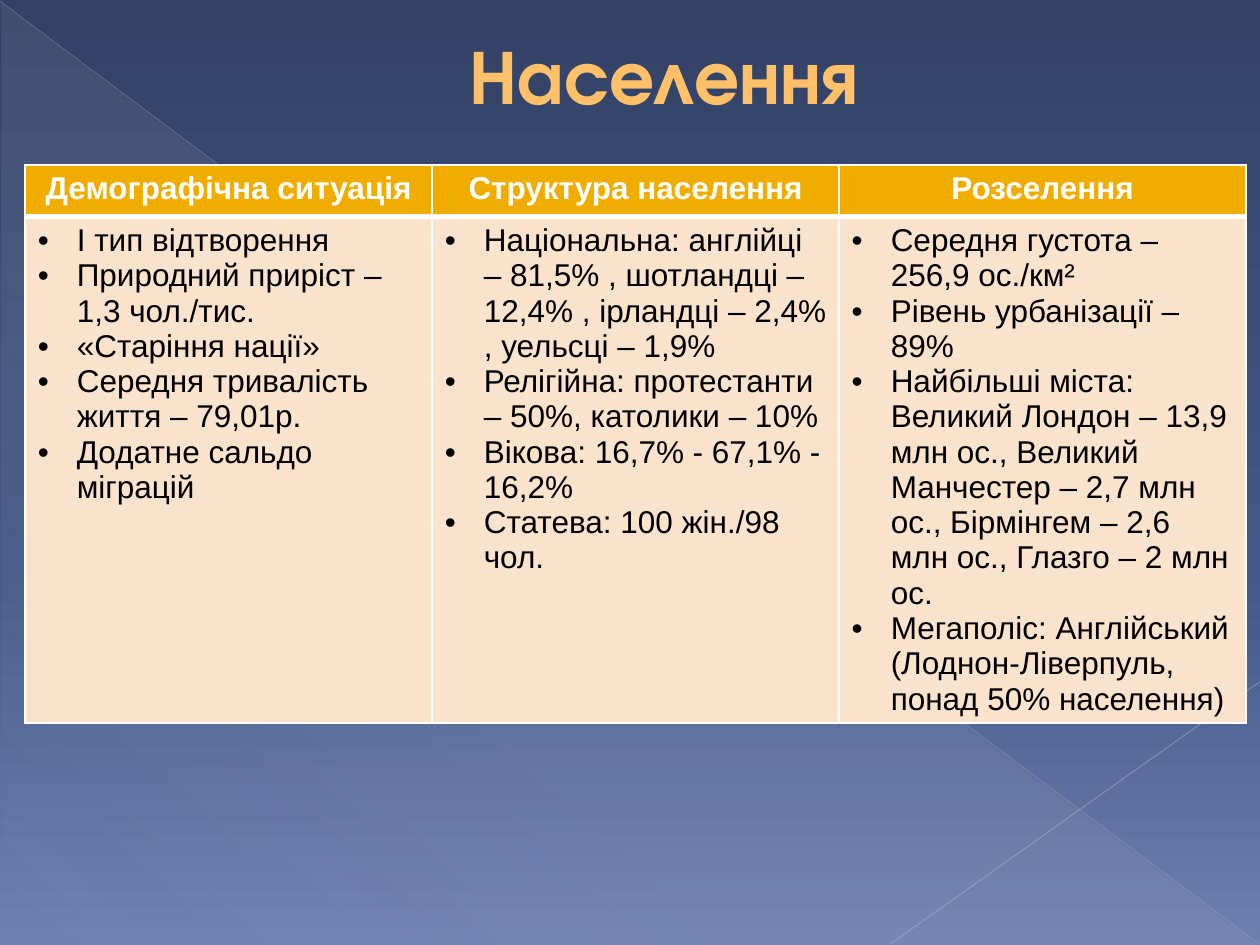
"""Builds the population slide on a grid of 100 columns by 75 rows."""
from typing import NamedTuple

from lxml.etree import SubElement as Sub
from pptx import Presentation as Deck
from pptx.dml.color import RGBColor as Color
from pptx.enum.shapes import MSO_CONNECTOR as Conn, MSO_SHAPE as Shape
from pptx.enum.text import MSO_ANCHOR as Anchor, MSO_AUTO_SIZE as Auto, PP_ALIGN as Align
from pptx.oxml.ns import qn
from pptx.util import Inches, Pt

COLS, ROWS = 100, 75
CELL = Inches(0.1)
WHITE = "FFFFFF"
HEAD = dict(name="Arial", size=Pt(18), bold=True)
BODY = dict(HEAD, bold=False)
TITLE = dict(name="TeX Gyre Adventor", size=Pt(44), bold=True)


class Stop(NamedTuple):
    """A gradient stop in percent."""
    pos: int
    tint: str
    alpha: int = 100


class Ray(NamedTuple):
    """A thin translucent line in grid units."""
    ends: tuple
    tint: str
    width: float
    alpha: int


class Topic(NamedTuple):
    """A table column with its heading and points."""
    head: str
    items: tuple


SKY = (Stop(0, "334265"), Stop(60, "445887"), Stop(100, "6C7FB1"))
HAZE = (Stop(0, "D4D4D6", 10), Stop(70, "D4D4D6", 8), Stop(100, "D4D4D6", 1))
RAYS = (
    Ray((0, 0.1, 99.9, 74.9), "B9BDC8", 0.39, 35),
    Ray((100, 54.1, 70.7, 74.9), "C1C4CE", 0.47, 45),
)
TOPICS = (
    Topic("Демографічна ситуація", (
        "І тип відтворення",
        "Природний приріст – 1,3 чол./тис.",
        "«Старіння нації»",
        "Середня тривалість життя – 79,01р.",
        "Додатне сальдо міграцій",
    )),
    Topic("Структура населення", (
        "Національна: англійці – 81,5% , шотландці – 12,4% , ірландці – 2,4% , уельсці – 1,9%",
        "Релігійна: протестанти – 50%, католики – 10%",
        "Вікова: 16,7% - 67,1% - 16,2%",
        "Статева: 100 жін./98 чол.",
    )),
    Topic("Розселення", (
        "Середня густота – 256,9 ос./км²",
        "Рівень урбанізації – 89%",
        "Найбільші міста: Великий Лондон – 13,9 млн ос., Великий Манчестер – 2,7 млн ос., "
        "Бірмінгем – 2,6 млн ос., Глазго – 2 млн ос.",
        "Мегаполіс: Англійський (Лоднон-Ліверпуль, понад 50% населення)",
    )),
)


def grid(*units: float) -> list[int]:
    """Turn grid units into lengths."""
    return [int(unit * CELL) for unit in units]


def hue(text: str) -> Color:
    """Read a hex colour."""
    return Color.from_string(text)


def apply(item, **values) -> None:
    """Set attributes from format values."""
    for key, value in values.items():
        setattr(item, key, value)


def ink(font, tint: str, values: dict) -> None:
    """Format a font."""
    apply(font, **values)
    font.color.rgb = hue(tint)


def tone(node, tint: str, alpha: int = 100) -> None:
    """Add a colour with its opacity to a node."""
    clr = Sub(node, qn("a:srgbClr"), val=tint)
    if alpha < 100:
        Sub(clr, qn("a:alpha"), val=str(alpha * 1000))


def blend(fill, root, stops: tuple, angle: int) -> None:
    """Give a fill a linear gradient."""
    fill.solid()
    old = next(root.iter(qn("a:solidFill")))
    home = old.getparent()
    grad = Sub(home, qn("a:gradFill"), rotWithShape="1")
    home.replace(old, grad)
    list_ = Sub(grad, qn("a:gsLst"))
    for stop in stops:
        tone(Sub(list_, qn("a:gs"), pos=str(stop.pos * 1000)), stop.tint, stop.alpha)
    Sub(grad, qn("a:lin"), ang=str(angle * 60000), scaled="0")


def draw_ray(slide, ray: Ray) -> None:
    """Draw one light ray."""
    line = slide.shapes.add_connector(Conn.STRAIGHT, *grid(*ray.ends))
    line.line.width = Pt(ray.width)
    line.line.fill.solid()
    line.line.color.rgb = hue(ray.tint)
    clr = next(line._element.spPr.iter(qn("a:srgbClr")))
    Sub(clr, qn("a:alpha"), val=str(ray.alpha * 1000))
    Sub(line._element.spPr, qn("a:effectLst"))


def draw_back(slide) -> None:
    """Draw the sky, the hazy wedge and the rays."""
    blend(slide.background.fill, slide._element.cSld, SKY, 90)
    wedge = slide.shapes.add_shape(Shape.RIGHT_TRIANGLE, *grid(0.1, 0.2, 99.8, 74.8))
    blend(wedge.fill, wedge._element.spPr, HAZE, 133)
    wedge.line.fill.background()
    wedge.shadow.inherit = False
    for ray in RAYS:
        draw_ray(slide, ray)


def draw_title(slide, text: str) -> None:
    """Fill and place the title in front of the backdrop."""
    title = slide.shapes.title
    slide.shapes._spTree.append(title._element)
    apply(title, **dict(zip(("left", "top", "width", "height"), grid(5.1, 1.3, 90, 9.1))))
    frame = title.text_frame
    apply(frame, text=text, vertical_anchor=Anchor.MIDDLE, auto_size=Auto.NONE, word_wrap=True)
    para = frame.paragraphs[0]
    para.alignment = Align.CENTER
    apply_indent(para, 0.53, 0)
    run = para.runs[0]
    edge = Sub(run._r.get_or_add_rPr(), qn("a:ln"), w=str(Pt(0.5)))
    tone(Sub(edge, qn("a:solidFill")), "A67800")
    ink(run.font, "FFC06A", TITLE)


def apply_indent(para, left: float, first: float) -> None:
    """Indent a paragraph."""
    props = para._p.get_or_add_pPr()
    props.set("marL", str(Inches(left)))
    props.set("indent", str(Inches(first)))


def style_cell(cell, tint: str, **widths: float) -> None:
    """Give a cell its borders and fill."""
    props = cell._tc.get_or_add_tcPr()
    for side in "LRTB":
        edge = Sub(props, qn(f"a:ln{side}"), w=str(Pt(widths.get(side, 1))))
        tone(Sub(edge, qn("a:solidFill")), WHITE)
    cell.fill.solid()
    cell.fill.fore_color.rgb = hue(tint)


def draw_table(slide) -> None:
    """Draw the table of topics."""
    table = slide.shapes.add_table(2, len(TOPICS), *grid(2, 13.1, 96.9, 44.3)).table
    for row, height in zip(table.rows, grid(4.1, 40.2)):
        row.height = height
    for col, topic in enumerate(TOPICS):
        head, body = table.cell(0, col), table.cell(1, col)
        style_cell(head, "F0AD00", B=3)
        style_cell(body, "F9E3CC", T=3)
        head.text = topic.head
        para = head.text_frame.paragraphs[0]
        para.alignment = Align.CENTER
        ink(para.runs[0].font, WHITE, HEAD)
        body.text = "\n".join(topic.items)
        for para in body.text_frame.paragraphs:
            apply_indent(para, 0.31, -0.31)
            props = para._p.get_or_add_pPr()
            Sub(props, qn("a:buFont"), typeface="Arial")
            Sub(props, qn("a:buChar"), char="•")
            ink(para.runs[0].font, "000000", BODY)


def main() -> None:
    """Build and save the slide."""
    deck = Deck()
    apply(deck, slide_width=COLS * CELL, slide_height=ROWS * CELL)
    slide = deck.slides.add_slide(deck.slide_layouts[5])
    draw_back(slide)
    draw_title(slide, "Населення")
    draw_table(slide)
    deck.save("out.pptx")


if __name__ == "__main__":
    main()
